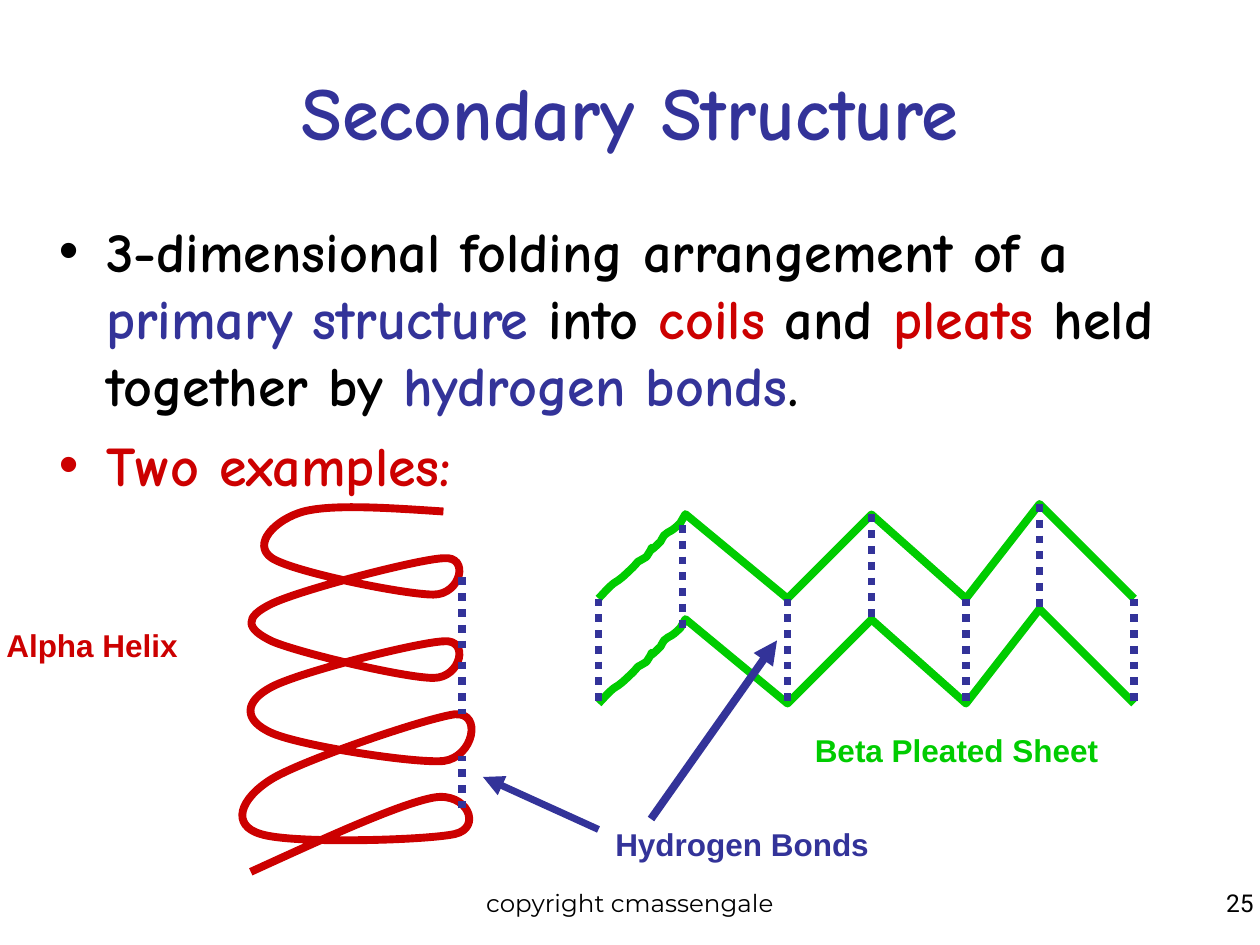
from pptx import Presentation
from pptx.dml.color import RGBColor
from pptx.enum.dml import MSO_LINE
from pptx.enum.shapes import MSO_CONNECTOR
from pptx.enum.text import MSO_ANCHOR, MSO_AUTO_SIZE, PP_ALIGN
from pptx.oxml.ns import qn
from pptx.util import Pt
from lxml.etree import SubElement

BLACK, BLUE, RED, GREEN = "000000", "333399", "CC0000", "00CC00"
HELIX = [
    ((114.4, 4.3),),
    ((82.8, 2.2), (51.1, 0), (34.5, 4.3)),
    ((18.7, 8.6), (4.3, 23), (16.5, 31)),
    ((28.8, 38.9), (92.1, 51.8), (108.7, 51.8)),
    ((124.5, 51.8), (129.6, 29.5), (114.4, 31)),
    ((99.3, 31.7), (33.1, 49), (16.5, 56.9)),
    ((0, 64.8), (1.4, 71.3), (16.5, 78.5)),
    ((31.6, 85), (92.1, 99.4), (108.7, 99.4)),
    ((124.5, 99.4), (129.6, 77), (114.4, 78.5)),
    ((99.3, 79.2), (33.1, 95.8), (16.5, 104.4)),
    ((0, 113), (0, 123.8), (16.5, 131)),
    ((33.1, 138.2), (97.2, 148.3), (114.4, 146.9)),
    ((131.7, 144.7), (136.8, 118.8), (120.9, 120.2)),
    ((104.4, 122.4), (34.5, 146.2), (16.5, 157)),
    ((-2.2, 168.5), (-7.2, 183.6), (10, 188.6)),
    ((28, 194.4), (104.4, 192.2), (120.9, 188.6)),
    ((136.8, 185), (128.1, 164.2), (108.7, 167.8)),
    ((89.2, 171.4), (46.8, 190.8), (4.3, 210.2)),
]
FRAYED_EDGE = [
    ((0, 54),),
    ((2.9, 51.1), (5.8, 47.5), (8.6, 45.4)),
    ((10.8, 43.9), (12.2, 43.2), (13.7, 41.8)),
    ((28.8, 28.1), (16.6, 36.7), (27.4, 30.2)),
    ((35.3, 18), (24.5, 32.4), (34.6, 22.3)),
    ((36, 21.6), (36, 19.4), (37.4, 18)),
    ((38.9, 16.6), (40.3, 15.8), (41.8, 15.1)),
    ((43.9, 13.7), (45.4, 12.2), (46.8, 10.8)),
    ((47.5, 9.4), (49.7, 5.8), (49.7, 5.8)),
]
FOLDS = [(108, 54), (156, 6), (210, 54), (252, 0), (306, 54)]


def color(value):
    return RGBColor.from_string(value)


def style_run(run, size, font, value, bold):
    run.font.size = Pt(size)
    run.font.name = font
    run.font.bold = bold
    run.font.color.rgb = color(value)


def add_frame(slide, left, top, width, height, wrap=True):
    text_frame = slide.shapes.add_textbox(Pt(left), Pt(top), Pt(width), Pt(height)).text_frame
    text_frame.word_wrap = wrap
    text_frame.margin_left = text_frame.margin_right = Pt(3.6)
    text_frame.margin_top = text_frame.margin_bottom = Pt(3.6)
    return text_frame


def add_label(slide, box, text, size, font, value, bold=True,
              align=PP_ALIGN.LEFT, wrap=False):
    text_frame = add_frame(slide, *box, wrap)
    text_frame.auto_size = MSO_AUTO_SIZE.SHAPE_TO_FIT_TEXT
    text_frame.text = text
    paragraph = text_frame.paragraphs[0]
    paragraph.alignment = align
    style_run(paragraph.runs[0], size, font, value, bold)
    return text_frame


def add_line(slide, start, end, width=4.5, dotted=False, arrow=False):
    connector = slide.shapes.add_connector(
        MSO_CONNECTOR.STRAIGHT, *(Pt(value) for value in (*start, *end)))
    connector.line.color.rgb = color(BLUE)
    connector.line.width = Pt(width)
    if dotted:
        connector.line.dash_style = MSO_LINE.ROUND_DOT
    if arrow:
        SubElement(connector.line._get_or_add_ln(), qn("a:tailEnd"), type="triangle")
    SubElement(connector._element.spPr, qn("a:effectLst"))


def add_strand(slide, left, top, width, height, segments, value, shift=0):
    builder = slide.shapes.build_freeform(Pt(left), Pt(top))
    builder.add_line_segments([(Pt(left + width), Pt(top + height))], close=False)
    shape = builder.convert_to_shape()
    outline = next(shape._element.iter(qn("a:path")))
    for child in list(outline):
        outline.remove(child)
    for index, points in enumerate(segments):
        tag = "a:cubicBezTo" if len(points) == 3 else "a:lnTo" if index else "a:moveTo"
        segment = SubElement(outline, qn(tag))
        for x, y in points:
            SubElement(segment, qn("a:pt"), x=str(Pt(x)), y=str(Pt(y - shift)))
    shape.shadow.inherit = False
    shape.fill.background()
    shape.line.color.rgb = color(value)
    shape.line.width = Pt(4.5)


def add_title(slide, left, top, width, height):
    text_frame = add_label(slide, (left, top, width, height), "Secondary Structure", 42.7,
                           "Comic Neue", BLUE, align=PP_ALIGN.CENTER, wrap=True)
    text_frame.auto_size = MSO_AUTO_SIZE.NONE
    text_frame.vertical_anchor = MSO_ANCHOR.MIDDLE


def add_body(slide, left, top, width, height):
    text_frame = add_frame(slide, left, top, width, height)
    bullets = [
        [("3-dimensional folding arrangement of a ", BLACK), ("primary structure", BLUE),
         (" into ", BLACK), ("coils", RED), (" and ", BLACK), ("pleats", RED),
         (" held together by ", BLACK), ("hydrogen bonds", BLUE), (".", BLACK)],
        [("Two examples:", RED)],
    ]
    for index, parts in enumerate(bullets):
        paragraph = text_frame.add_paragraph() if index else text_frame.paragraphs[0]
        if index:
            paragraph.space_before = Pt(7)
        properties = paragraph._p.get_or_add_pPr()
        properties.set("marL", str(Pt(27)))
        properties.set("indent", str(Pt(-27)))
        SubElement(properties, qn("a:buFont"), typeface="Arial")
        SubElement(properties, qn("a:buChar"), char="•")
        for text, value in parts:
            run = paragraph.add_run()
            run.text = text
            style_run(run, 32, "Comic Neue", value, True)


def add_helix(slide, left, top):
    add_label(slide, (left, top + 66, 106, 27), "Alpha Helix", 18, "Arial", RED)
    add_strand(slide, left + 139, top + 2, 131, 208, HELIX, RED, shift=2)
    for start, end in ((174, 144), (90, 120), (42, 84)):
        add_line(slide, (left + 264, top + start), (left + 264, top + end), dotted=True)


def add_sheet(slide, left, top, gap=60):
    add_label(slide, (left + 120, top + 126, 170, 27), "Beta Pleated Sheet", 18,
              "Arial", GREEN)
    strand = FRAYED_EDGE + [(fold,) for fold in FOLDS]
    for offset in (0, gap):
        add_strand(slide, left, top + offset, 306, 54, strand, GREEN)
    for x, y in [(0, 54), (48, 12)] + FOLDS:
        add_line(slide, (left + x, top + y), (left + x, top + y + gap), dotted=True)


def add_bond_callout(slide, left, top):
    add_label(slide, (left, top, 153, 27), "Hydrogen Bonds", 18, "Arial", BLUE)
    add_line(slide, (left - 6, top + 6), (left - 72, top - 24), width=4, arrow=True)
    add_line(slide, (left + 24, top), (left + 96, top - 102), arrow=True)


def add_footer(slide, top, height):
    add_label(slide, (246, top, 228, height), "copyright cmassengale", 14, "Montserrat",
              BLACK, bold=False, align=PP_ALIGN.CENTER, wrap=True)
    add_label(slide, (693, top, 27, height), "25", 14, "Roboto", BLACK, bold=False,
              align=PP_ALIGN.RIGHT)


def main():
    presentation = Presentation()
    presentation.slide_width, presentation.slide_height = Pt(720), Pt(540)
    slide = presentation.slides.add_slide(presentation.slide_layouts[6])
    add_title(slide, 54, 30, 612, 66)
    add_body(slide, 30, 120, 666, 324)
    add_helix(slide, 0, 288)
    add_sheet(slide, 342, 288)
    add_bond_callout(slide, 348, 468)
    add_footer(slide, 504, 26)
    presentation.save("out.pptx")


if __name__ == "__main__":
    main()
